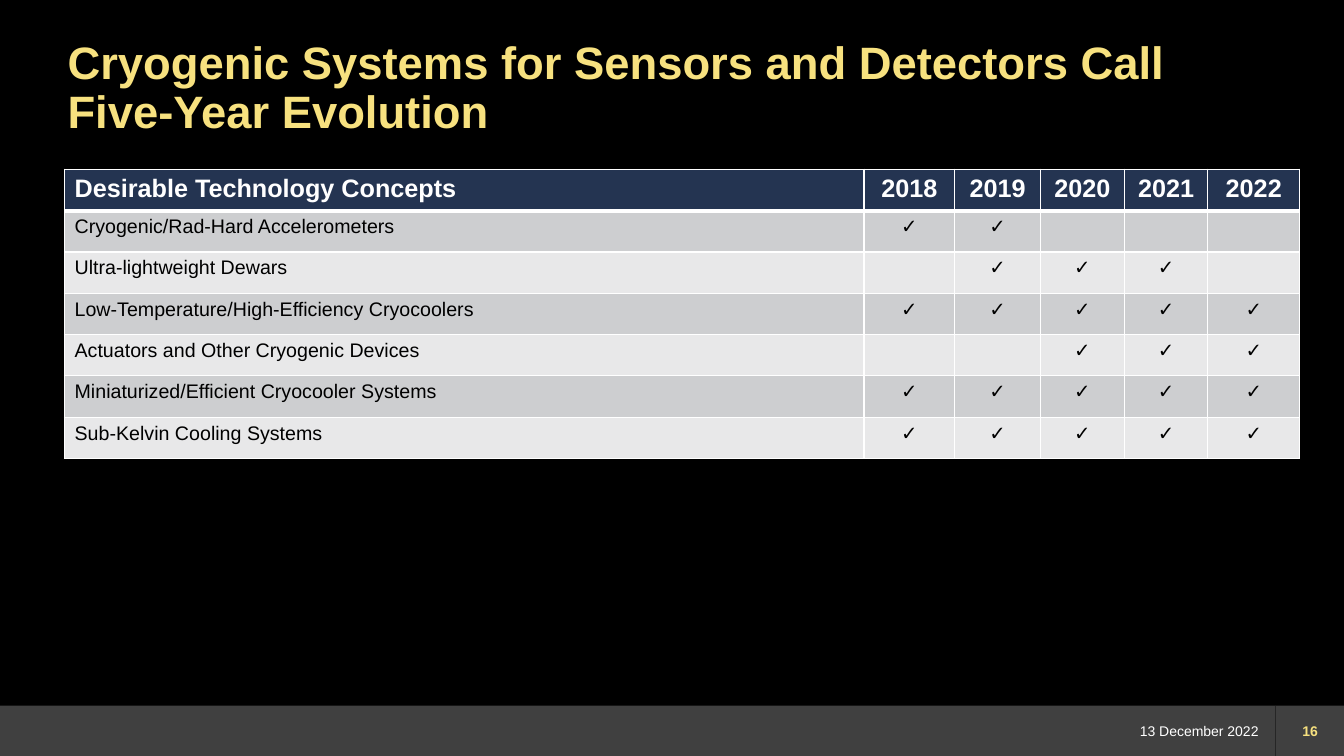
from lxml import etree
from pptx import Presentation
from pptx import util as u
from pptx.dml.color import RGBColor
from pptx.enum import shapes, text
from pptx.oxml.ns import qn

WIDTH, HEIGHT = 13.33, 7.5
FOOTER_TOP, FOOTER_HEIGHT = 7, 0.5
ROW_HEIGHT = 0.41
COLUMN_WIDTHS = [7.93, 0.9, 0.85, 0.83, 0.83, 0.91]
COLORS = {
    "background": "000000", "footer": "404040", "divider": "262626",
    "accent": "F7E17F", "white": "FFFFFF", "black": "000000",
    "header": "243451", "odd": "CDCED0", "even": "E8E8E9",
}
YEARS = range(2018, 2023)
CONCEPTS = {
    "Cryogenic/Rad-Hard Accelerometers": {2018, 2019},
    "Ultra-lightweight Dewars": {2019, 2020, 2021},
    "Low-Temperature/High-Efficiency Cryocoolers": set(YEARS),
    "Actuators and Other Cryogenic Devices": {2020, 2021, 2022},
    "Miniaturized/Efficient Cryocooler Systems": set(YEARS),
    "Sub-Kelvin Cooling Systems": set(YEARS),
}


def color(name):
    return RGBColor.from_string(COLORS[name])


def box(*lengths):
    return [u.Inches(length) for length in lengths]


def style_paragraph(paragraph, size, color_name, bold=False, align=text.PP_ALIGN.LEFT):
    paragraph.alignment = align
    font = paragraph.font
    font.name, font.size, font.bold = "Arial", u.Pt(size), bold
    font.color.rgb = color(color_name)


def set_margins(frame, horizontal=0):
    frame.margin_left = frame.margin_right = u.Inches(horizontal)
    frame.margin_top = frame.margin_bottom = 0


def add_title(slide, words):
    title = slide.shapes.title
    title.left, title.top, title.width, title.height = box(0.67, 0.4, 12, 0.83)
    frame = title.text_frame
    frame.text = words
    frame.word_wrap = True
    frame.auto_size = text.MSO_AUTO_SIZE.NONE
    frame.vertical_anchor = text.MSO_ANCHOR.TOP
    set_margins(frame)
    paragraph = frame.paragraphs[0]
    paragraph.line_spacing = 0.9
    style_paragraph(paragraph, 32.4, "accent", True)


def add_footer_text(slide, words, left, width, margin, color_name, bold, align):
    shape = slide.shapes.add_textbox(*box(left, FOOTER_TOP, width, FOOTER_HEIGHT))
    frame = shape.text_frame
    frame.text = words
    frame.word_wrap = True
    frame.vertical_anchor = text.MSO_ANCHOR.MIDDLE
    set_margins(frame, margin)
    style_paragraph(frame.paragraphs[0], 10, color_name, bold, align)


def add_footer(slide):
    bar = slide.shapes.add_shape(
        shapes.MSO_SHAPE.RECTANGLE, *box(0, FOOTER_TOP, WIDTH, FOOTER_HEIGHT))
    bar.shadow.inherit = False
    bar.fill.solid()
    bar.fill.fore_color.rgb = color("footer")
    bar.line.fill.background()
    divider = slide.shapes.add_connector(
        shapes.MSO_CONNECTOR.STRAIGHT, *box(12.65, FOOTER_TOP, 12.65, HEIGHT))
    divider.line.color.rgb = color("divider")
    divider.line.width = u.Pt(1)
    etree.SubElement(divider._element.spPr, qn("a:effectLst"))
    add_footer_text(slide, "13 December 2022", 11.08, 1.5, 0.1, "white", False,
                    text.PP_ALIGN.RIGHT)
    add_footer_text(slide, "16", 12.73, 0.53, 0, "accent", True, text.PP_ALIGN.CENTER)


def add_borders(cell, row):
    properties = cell._tc.get_or_add_tcPr()
    widths = {"L": 1, "R": 1, "T": 3 if row == 1 else 1, "B": 3 if row == 0 else 1}
    for side, width in widths.items():
        line = etree.SubElement(properties, qn(f"a:ln{side}"), w=str(u.Pt(width)))
        fill = etree.SubElement(line, qn("a:solidFill"))
        etree.SubElement(fill, qn("a:srgbClr"), val=COLORS["white"])


def fill_cell(cell, words, row, column):
    add_borders(cell, row)
    cell.fill.solid()
    cell.fill.fore_color.rgb = color("header" if row == 0 else "odd" if row % 2 else "even")
    cell.text = words
    align = text.PP_ALIGN.CENTER if column else text.PP_ALIGN.LEFT
    size, color_name = (18, "white") if row == 0 else (14, "black")
    style_paragraph(cell.text_frame.paragraphs[0], size, color_name, row == 0, align)


def add_concept_table(slide):
    rows = [["Desirable Technology Concepts", *map(str, YEARS)]]
    for concept, active in CONCEPTS.items():
        rows.append([concept, *("✓" if year in active else "" for year in YEARS)])
    table = slide.shapes.add_table(
        len(rows), len(COLUMN_WIDTHS),
        *box(0.64, 1.68, sum(COLUMN_WIDTHS), ROW_HEIGHT * len(rows))).table
    for column, width in zip(table.columns, COLUMN_WIDTHS):
        column.width = u.Inches(width)
    for row, values in enumerate(rows):
        table.rows[row].height = u.Inches(ROW_HEIGHT)
        for column, words in enumerate(values):
            fill_cell(table.cell(row, column), words, row, column)


def main():
    presentation = Presentation()
    presentation.slide_width, presentation.slide_height = box(WIDTH, HEIGHT)
    slide = presentation.slides.add_slide(presentation.slide_layouts[5])
    slide.background.fill.solid()
    slide.background.fill.fore_color.rgb = color("background")
    add_footer(slide)
    add_title(slide, "Cryogenic Systems for Sensors and Detectors Call Five-Year Evolution")
    add_concept_table(slide)
    presentation.save("out.pptx")


if __name__ == "__main__":
    main()
